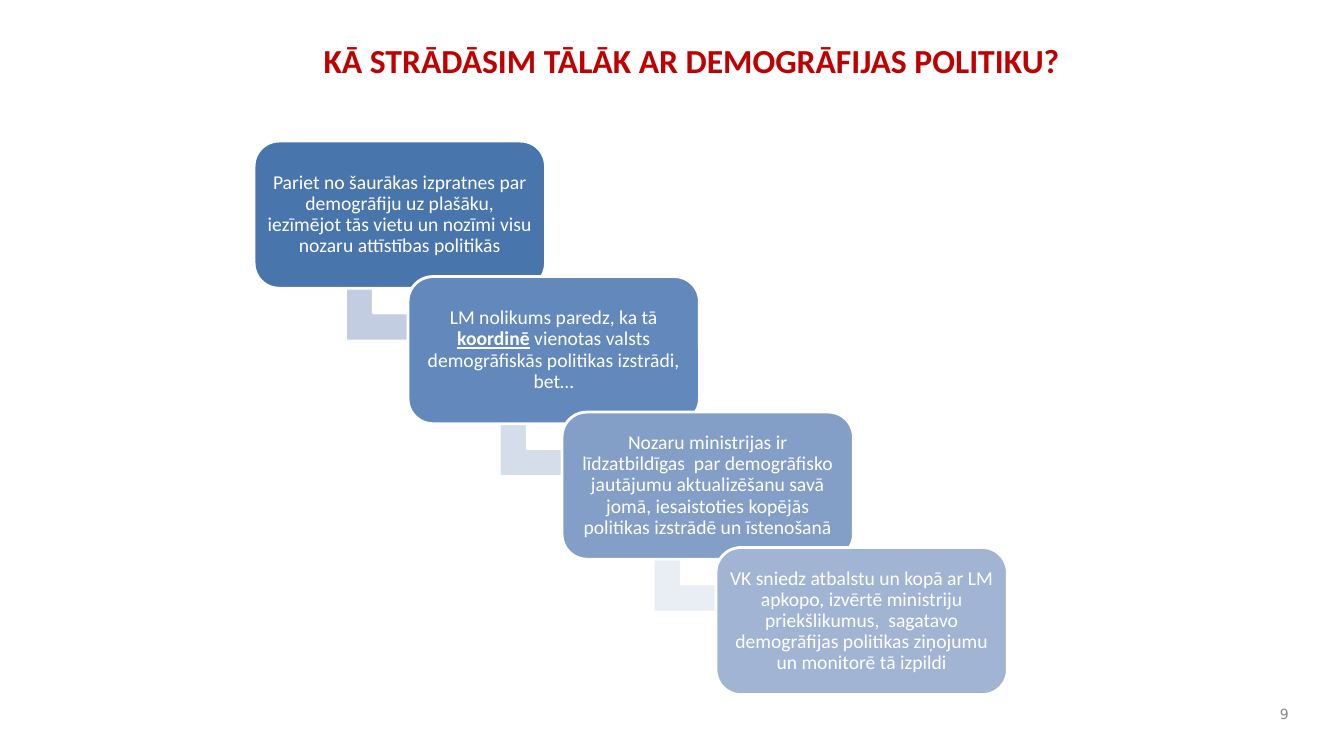
from pptx import Presentation
from pptx.dml.color import RGBColor
from pptx.enum.shapes import MSO_SHAPE
from pptx.enum.text import MSO_ANCHOR, PP_ALIGN
from pptx.util import Inches, Pt

STEPS = [
    ("4875AC", "C2CDE1", [
        ("Pariet no šaurākas izpratnes par demogrāfiju uz plašāku, "
         "iezīmējot tās vietu un nozīmi visu nozaru attīstības politikās", {})]),
    ("6389BC", "D6DDEA", [
        ("LM nolikums paredz, ka tā ", {}),
        ("koordinē", {"bold": True, "underline": True}),
        (" vienotas valsts demogrāfiskās politikas izstrādi, bet…", {})]),
    ("839EC7", "E9EDF4", [
        ("Nozaru ministrijas ir līdzatbildīgas  par demogrāfisko jautājumu "
         "aktualizēšanu savā jomā, iesaistoties kopējās politikas izstrādē "
         "un īstenošanā", {})]),
    ("A2B4D4", None, [
        ("VK sniedz atbalstu un kopā ar LM apkopo, izvērtē ministriju "
         "priekšlikumus,  sagatavo demogrāfijas politikas ziņojumu "
         "un monitorē tā izpildi", {})]),
]
LEFT, TOP = 2.52, 1.4
STEP_X, STEP_Y = 1.527, 1.344


def color(code):
    return RGBColor.from_string(code)


def apply(target, values):
    for name, value in values.items():
        setattr(target, name, value)


def write(frame, runs, size, code, font, align, pad, anchor):
    apply(frame, {"word_wrap": True, "vertical_anchor": anchor,
                  "margin_left": pad[0], "margin_right": pad[0],
                  "margin_top": pad[1], "margin_bottom": pad[1]})
    para = frame.paragraphs[0]
    para.alignment = align
    for text, extra in runs:
        run = para.add_run()
        run.text = text
        apply(run.font, {"name": font, "size": Pt(size), **extra})
        run.font.color.rgb = color(code)
    return para


def place(item, left, top, width, height):
    apply(item, {"left": Inches(left), "top": Inches(top),
                 "width": Inches(width), "height": Inches(height)})


def add_form(slide, kind, box, fill, adjust):
    form = slide.shapes.add_shape(kind, *map(Inches, box))
    form.shadow.inherit = False
    form.fill.solid()
    form.fill.fore_color.rgb = color(fill)
    form.line.color.rgb = color("FFFFFF")
    form.line.width = Pt(2)
    for index, value in enumerate(adjust):
        form.adjustments[index] = value
    return form


def add_step(slide, index, fill, tint, runs):
    left, top = LEFT + index * STEP_X, TOP + index * STEP_Y
    if tint:
        arrow = add_form(slide, MSO_SHAPE.BENT_UP_ARROW,
                         (left + 0.96, top + 1.16, 0.84, 0.95), tint,
                         (0.33, 0.25, 0.36))
        arrow.rotation = 90
    card = add_form(slide, MSO_SHAPE.ROUNDED_RECTANGLE,
                    (left, top, 2.89, 1.46), fill, (0.17,))
    para = write(card.text_frame, runs, 14, "FFFFFF", "Calibri",
                 PP_ALIGN.CENTER, (Inches(0.06), Inches(0.06)),
                 MSO_ANCHOR.MIDDLE)
    para.line_spacing = 0.9


def add_title(slide, text):
    title = slide.shapes.title
    place(title, 3.11, 0.35, 8.07, 1.13)
    write(title.text_frame, [(text, {"bold": True})], 24, "C00000", "Calibri",
          PP_ALIGN.LEFT, (Inches(0.1), Inches(0.05)), MSO_ANCHOR.TOP)


def add_number(slide, text):
    box = slide.shapes.add_textbox(*map(Inches, (12.44, 6.92, 0.44, 0.33)))
    write(box.text_frame, [(text, {})], 10, "898989", "DejaVu Sans",
          PP_ALIGN.RIGHT, (Inches(0.1), Inches(0.05)), MSO_ANCHOR.MIDDLE)


def main():
    deck = Presentation()
    apply(deck, {"slide_width": Inches(13.33), "slide_height": Inches(7.5)})
    slide = deck.slides.add_slide(deck.slide_layouts[5])
    add_title(slide, "KĀ STRĀDĀSIM TĀLĀK AR DEMOGRĀFIJAS POLITIKU?")
    add_number(slide, "9")
    for index, step in enumerate(STEPS):
        add_step(slide, index, *step)
    deck.save("out.pptx")


if __name__ == "__main__":
    main()
